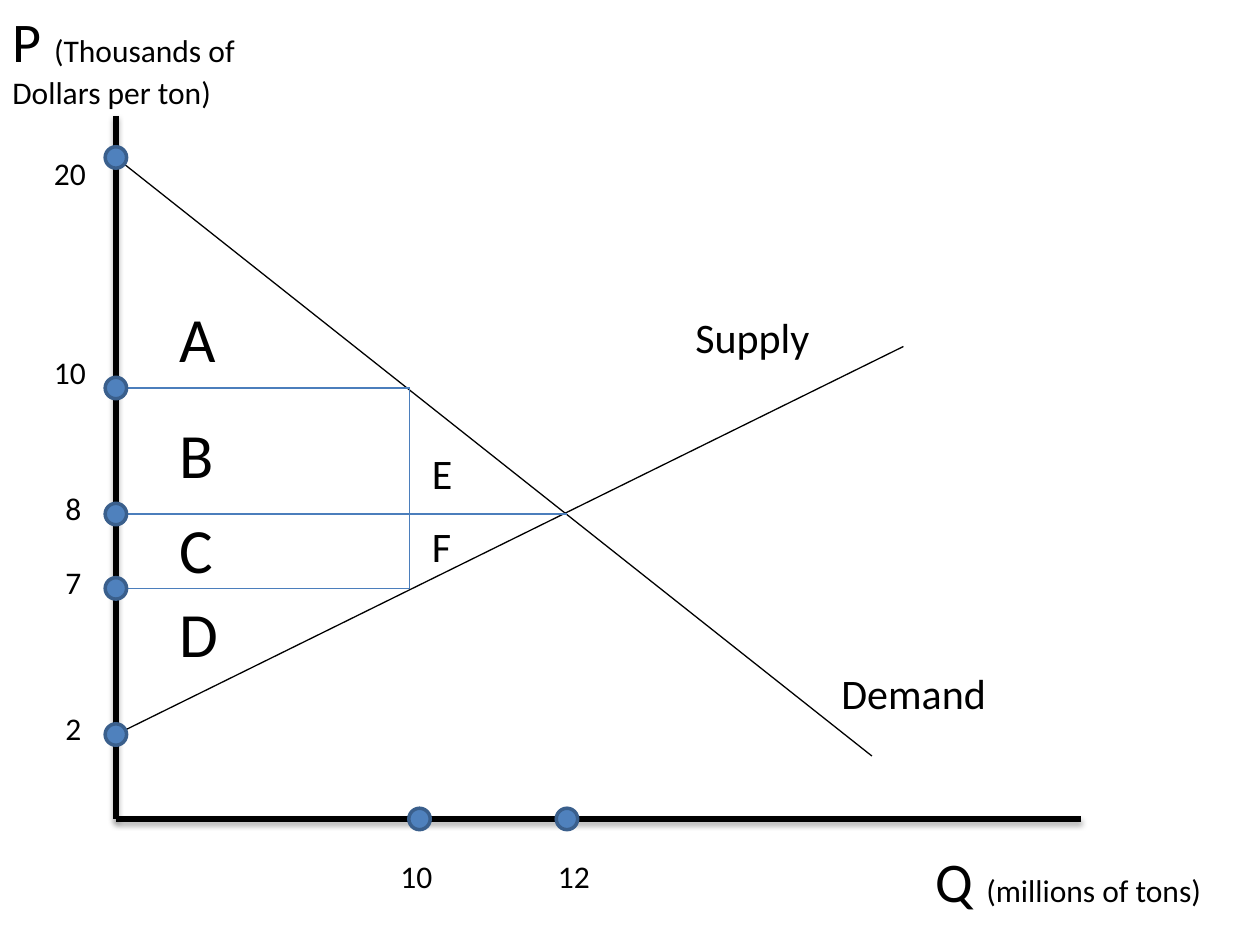
"""Build a supply and demand slide with labelled surplus areas."""
import lxml.etree
import pptx
import pptx.dml.color
import pptx.enum.shapes
import pptx.enum.text
import pptx.oxml.ns
import pptx.util

Inches = pptx.util.Inches
Pt = pptx.util.Pt
qn = pptx.oxml.ns.qn
BLACK = pptx.dml.color.RGBColor(0x00, 0x00, 0x00)
GUIDE_BLUE = pptx.dml.color.RGBColor(0x4B, 0x7E, 0xBC)
DOT_FILL = pptx.dml.color.RGBColor(0x4F, 0x81, 0xBD)
DOT_LINE = pptx.dml.color.RGBColor(0x3A, 0x5F, 0x8C)
AXIS_X, AXIS_Y = 0.92, 6.5
DOT_SIZE = 0.17

presentation = pptx.Presentation()
presentation.slide_width = Inches(10)
presentation.slide_height = Inches(7.5)
slide = presentation.slides.add_slide(presentation.slide_layouts[6])


def add_line(start, end, color, width):
    connector = slide.shapes.add_connector(
        pptx.enum.shapes.MSO_CONNECTOR.STRAIGHT,
        *(Inches(value) for value in (*start, *end)))
    connector.line.color.rgb = color
    connector.line.width = Pt(width)
    return lxml.etree.SubElement(connector._element.spPr, qn("a:effectLst"))


def add_text(left, top, width, height, lines, wrap=True):
    shape = slide.shapes.add_textbox(
        Inches(left), Inches(top), Inches(width), Inches(height))
    frame = shape.text_frame
    frame.word_wrap = wrap
    frame.auto_size = pptx.enum.text.MSO_AUTO_SIZE.SHAPE_TO_FIT_TEXT
    for index, runs in enumerate(lines):
        paragraph = frame.add_paragraph() if index else frame.paragraphs[0]
        paragraph.font.name = "Calibri"
        paragraph.font.color.rgb = BLACK
        if len(runs) == 1:
            paragraph.font.size = Pt(runs[0][1])
        for text, size in runs:
            run = paragraph.add_run()
            run.text = text
            if len(runs) > 1:
                run.font.size = Pt(size)


for start, end in [((AXIS_X, 0.92), (AXIS_X, AXIS_Y)),
                   ((AXIS_X, AXIS_Y), (8.58, AXIS_Y))]:
    effects = add_line(start, end, BLACK, 3)
    shadow = lxml.etree.SubElement(
        effects, qn("a:outerShdw"), blurRad=str(Pt(3.1)), dist=str(Pt(1.8)),
        dir="5400000", rotWithShape="0")
    shadow_color = lxml.etree.SubElement(shadow, qn("a:srgbClr"), val="000000")
    lxml.etree.SubElement(shadow_color, qn("a:alpha"), val="35000")

for start, end, color in [
    ((AXIS_X, 1.25), (6.92, 6), BLACK),
    ((AXIS_X, 5.83), (7.17, 2.75), BLACK),
    ((AXIS_X, 3.08), (3.25, 3.08), GUIDE_BLUE),
    ((4.5, 4.08), (AXIS_X, 4.08), GUIDE_BLUE),
    ((AXIS_X, 4.67), (3.25, 4.67), GUIDE_BLUE),
    ((3.25, 3.08), (3.25, 4.67), GUIDE_BLUE),
]:
    add_line(start, end, color, 0.75)

for text, size, left, top, width, height, wrap in [
    ("A", 36, 1.33, 2.33, 0.75, 0.71, True),
    ("B", 36, 1.33, 3.25, 0.48, 0.71, False),
    ("C", 36, 1.33, 4, 0.75, 0.71, True),
    ("D", 36, 1.33, 4.67, 0.51, 0.71, False),
    ("E", 24, 3.33, 3.5, 0.42, 0.5, True),
    ("F", 24, 3.33, 4.08, 0.5, 0.5, True),
    ("Supply", 24, 5.42, 2.42, 1.42, 0.5, True),
    ("Demand", 24, 6.58, 5.25, 2.33, 0.5, True),
    ("20", 18, 0.33, 1.17, 0.5, 0.4, True),
    ("10", 18, 0.33, 2.75, 0.67, 0.4, True),
    ("8", 18, 0.42, 3.83, 0.5, 0.42, True),
    ("7", 18, 0.42, 4.42, 0.42, 0.4, True),
    ("2", 18, 0.42, 5.58, 0.5, 0.4, True),
    ("10", 18, 3.08, 6.75, 0.83, 0.4, True),
    ("12", 18, 4.33, 6.75, 0.75, 0.4, True),
]:
    add_text(left, top, width, height, [[(text, size)]], wrap)

add_text(0, 0, 2.08, 0.94,
         [[("P ", 32), ("(Thousands of", 18)], [("Dollars per ton)", 18)]])
add_text(7.33, 6.67, 2.67, 0.64, [[("Q ", 32), ("(millions of tons)", 18)]])

price_dots = [(AXIS_X, y) for y in (1.25, 3.08, 4.08, 4.67, 5.83)]
quantity_dots = [(x, AXIS_Y) for x in (3.33, 4.5)]
for x, y in price_dots + quantity_dots:
    dot = slide.shapes.add_shape(
        pptx.enum.shapes.MSO_SHAPE.OVAL,
        Inches(x - DOT_SIZE / 2), Inches(y - DOT_SIZE / 2),
        Inches(DOT_SIZE), Inches(DOT_SIZE))
    dot.shadow.inherit = False
    dot.fill.solid()
    dot.fill.fore_color.rgb = DOT_FILL
    dot.line.color.rgb = DOT_LINE
    dot.line.width = Pt(2)

presentation.save("out.pptx")
